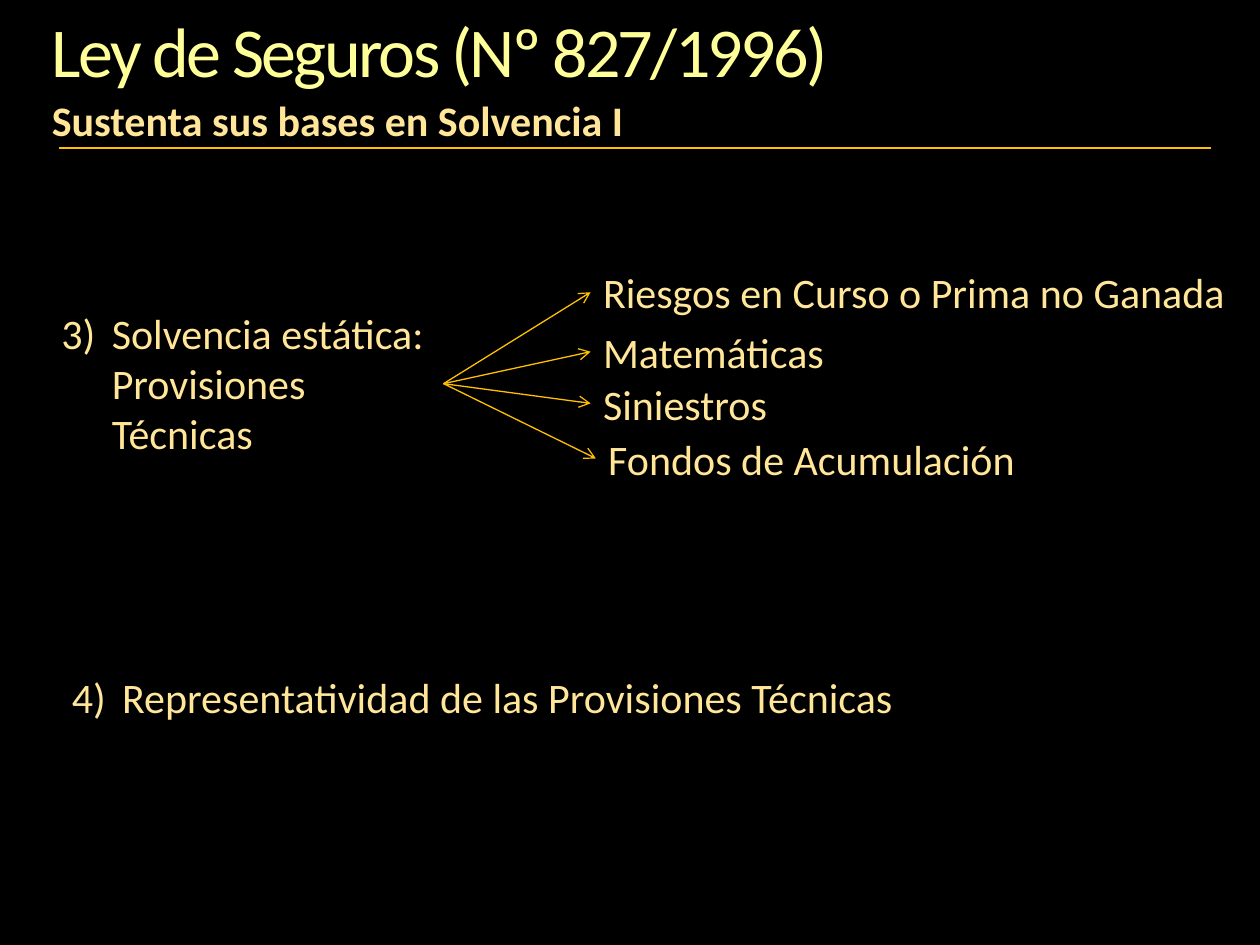
from pptx import Presentation
from pptx.dml.color import RGBColor
from pptx.enum.shapes import MSO_CONNECTOR
from pptx.enum.text import MSO_ANCHOR, MSO_AUTO_SIZE, PP_ALIGN
from pptx.oxml.ns import qn
from pptx.util import Pt
from lxml.etree import SubElement

BLACK = RGBColor(0x00, 0x00, 0x00)
YELLOW = RGBColor(0xFF, 0xFF, 0x99)
CREAM = RGBColor(0xFF, 0xE6, 0x99)
GOLD = RGBColor(0xFF, 0xC0, 0x00)
FONT = "Calibri"
LEFT_SIDE, RIGHT_SIDE = 1, 3

PROVISIONS = [
    ("Riesgos en Curso o Prima no Ganada", 337.5, 149, 373),
    ("Matemáticas", 337.5, 183, 142),
    ("Siniestros", 337.5, 212.5, 109.5),
    ("Fondos de Acumulación", 340.5, 244, 249),
]


def write_text(shape, text, size=24, color=CREAM, bold=False, wrap=True,
               hanging=0, spacing=0, line_spacing=None,
               auto_size=MSO_AUTO_SIZE.SHAPE_TO_FIT_TEXT):
    frame = shape.text_frame
    frame.word_wrap = wrap
    frame.auto_size = auto_size
    frame.vertical_anchor = MSO_ANCHOR.TOP
    paragraph = frame.paragraphs[0]
    paragraph.alignment = PP_ALIGN.LEFT
    if line_spacing:
        paragraph.line_spacing = line_spacing
    if hanging:
        properties = paragraph._p.get_or_add_pPr()
        properties.set("marL", str(Pt(hanging)))
        properties.set("indent", str(-Pt(hanging)))
    run = paragraph.add_run()
    run.text = text
    run.font.name = FONT
    run.font.size = Pt(size)
    run.font.bold = bold
    run.font.color.rgb = color
    if spacing:
        run._r.get_or_add_rPr().set("spc", str(int(spacing * 100)))


def add_text(slide, text, left, top, width, height=36, **text_format):
    box = slide.shapes.add_textbox(Pt(left), Pt(top), Pt(width), Pt(height))
    write_text(box, text, **text_format)
    return box


def add_title(slide, text):
    title = slide.shapes.title
    title.left, title.top = Pt(22.5), Pt(6)
    title.width, title.height = Pt(660), Pt(44)
    write_text(title, text, size=40, color=YELLOW, spacing=-1.5,
               line_spacing=0.9, auto_size=MSO_AUTO_SIZE.NONE)


def add_line(slide, start=(0, 0), end=(0, 0), width=0.75):
    line = slide.shapes.add_connector(
        MSO_CONNECTOR.STRAIGHT, *map(Pt, start), *map(Pt, end))
    line.line.color.rgb = GOLD
    line.line.width = Pt(width)
    SubElement(line._element.spPr, qn("a:effectLst"))
    return line


def add_arrow(slide, source, target):
    arrow = add_line(slide)
    arrow.begin_connect(source, RIGHT_SIDE)
    arrow.end_connect(target, LEFT_SIDE)
    SubElement(arrow.line._get_or_add_ln(), qn("a:tailEnd"), type="arrow")


def main():
    presentation = Presentation()
    presentation.slide_width, presentation.slide_height = Pt(720), Pt(540)
    slide = presentation.slides.add_slide(presentation.slide_layouts[5])
    slide.background.fill.solid()
    slide.background.fill.fore_color.rgb = BLACK

    add_title(slide, "Ley de Seguros (Nº 827/1996)")
    add_text(slide, "Sustenta sus bases en Solvencia I", 22.5, 50.5, 400, bold=True)
    add_line(slide, (34, 84.5), (692, 84.5), width=1.5)

    solvency = add_text(slide, "3)\tSolvencia estática: Provisiones Técnicas",
                        28, 172, 225.5, 94.5, hanging=28.8)
    for text, left, top, width in PROVISIONS:
        label = add_text(slide, text, left, top, width, wrap=False)
        add_arrow(slide, solvency, label)

    add_text(slide, "4)\tRepresentatividad de las Provisiones Técnicas",
             34, 380, 488, wrap=False, hanging=28.8)
    presentation.save("out.pptx")


if __name__ == "__main__":
    main()
